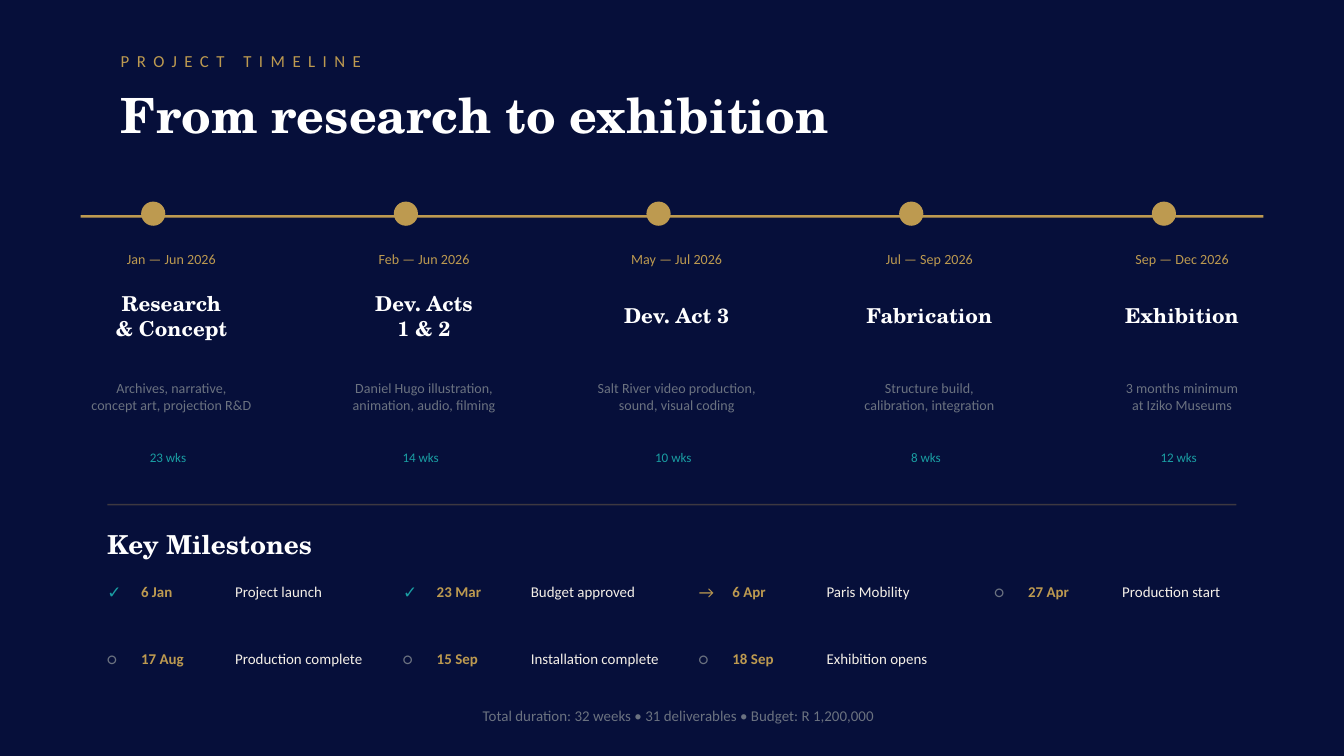
import pptx
import pptx.dml.color
import pptx.enum.shapes
import pptx.enum.text
import pptx.oxml.ns
import pptx.util
import lxml.etree

Inches = pptx.util.Inches
RGBColor = pptx.dml.color.RGBColor
Shape = pptx.enum.shapes.MSO_SHAPE
Align = pptx.enum.text.PP_ALIGN

NAVY = RGBColor(0x06, 0x0F, 0x3A)
GOLD = RGBColor(0xBD, 0x9A, 0x50)
TEAL = RGBColor(0x1A, 0x9E, 0xA3)
GRAY = RGBColor(0x6B, 0x72, 0x80)
CREAM = RGBColor(0xF5, 0xF0, 0xE8)
WHITE = RGBColor(0xFF, 0xFF, 0xFF)

SANS = "Calibri"
SERIF = "TeX Gyre Schola"

PHASES = [
    ("Jan — Jun 2026", "Research\n& Concept",
     "Archives, narrative,\nconcept art, projection R&D", "23 wks"),
    ("Feb — Jun 2026", "Dev. Acts\n1 & 2",
     "Daniel Hugo illustration,\nanimation, audio, filming", "14 wks"),
    ("May — Jul 2026", "Dev. Act 3",
     "Salt River video production,\nsound, visual coding", "10 wks"),
    ("Jul — Sep 2026", "Fabrication",
     "Structure build,\ncalibration, integration", "8 wks"),
    ("Sep — Dec 2026", "Exhibition",
     "3 months minimum\nat Iziko Museums", "12 wks"),
]
PHASE_LEFT = 0.4
PHASE_STEP = 1.88
PHASE_WIDTH = 1.75

MILESTONES = [
    ("✓", "6 Jan", "Project launch"),
    ("✓", "23 Mar", "Budget approved"),
    ("→", "6 Apr", "Paris Mobility"),
    ("○", "27 Apr", "Production start"),
    ("○", "17 Aug", "Production complete"),
    ("○", "15 Sep", "Installation complete"),
    ("○", "18 Sep", "Exhibition opens"),
]
MARK_COLORS = {"✓": TEAL, "→": GOLD, "○": GRAY}
MILESTONE_COLUMNS = 4


def add_text(slide, text, left, top, width, height, size, color, font=SANS,
             bold=False, align=Align.LEFT, inset=False):
    box = slide.shapes.add_textbox(
        Inches(left), Inches(top), Inches(width), Inches(height))
    frame = box.text_frame
    frame.word_wrap = True
    frame.vertical_anchor = pptx.enum.text.MSO_ANCHOR.MIDDLE
    if not inset:
        frame.margin_left = frame.margin_right = 0
        frame.margin_top = frame.margin_bottom = 0
    frame.text = text
    for paragraph in frame.paragraphs:
        paragraph.alignment = align
        paragraph.font.name = font
        paragraph.font.size = pptx.util.Pt(size)
        paragraph.font.bold = bold
        paragraph.font.color.rgb = color
    return box


def add_gold_shape(slide, kind, left, top, width, height):
    shape = slide.shapes.add_shape(
        kind, Inches(left), Inches(top), Inches(width), Inches(height))
    shape.shadow.inherit = False
    shape.fill.solid()
    shape.fill.fore_color.rgb = GOLD
    shape.line.fill.background()
    return shape


def set_opacity(shape, percent):
    color = shape._element.spPr.find(".//" + pptx.oxml.ns.qn("a:srgbClr"))
    alpha = lxml.etree.SubElement(color, pptx.oxml.ns.qn("a:alpha"))
    alpha.set("val", str(percent * 1000))


def set_letter_spacing(box, points):
    for run in box.text_frame.paragraphs[0].runs:
        run._r.get_or_add_rPr().set("spc", str(points * 100))


def add_header(slide):
    label = add_text(slide, "PROJECT TIMELINE", 0.8, 0.3, 5, 0.3, 9, GOLD,
                     inset=True)
    set_letter_spacing(label, 4)
    add_text(slide, "From research to exhibition", 0.8, 0.6, 9, 0.5, 26, WHITE,
             font=SERIF, bold=True, inset=True)


def add_phase(slide, left, dates, title, details, duration):
    add_gold_shape(slide, Shape.OVAL, left + 0.65, 1.5, 0.18, 0.18)
    add_text(slide, dates, left, 1.8, PHASE_WIDTH, 0.25, 7.5, GOLD,
             align=Align.CENTER)
    add_text(slide, title, left, 2.1, PHASE_WIDTH, 0.5, 11, WHITE,
             font=SERIF, bold=True, align=Align.CENTER)
    add_text(slide, details, left, 2.65, PHASE_WIDTH, 0.6, 7.5, GRAY,
             align=Align.CENTER)
    add_text(slide, duration, left + 0.35, 3.3, 1, 0.2, 7, TEAL,
             align=Align.CENTER)


def add_milestone(slide, left, top, mark, date, event):
    add_text(slide, mark, left, top, 0.2, 0.2, 9, MARK_COLORS[mark])
    add_text(slide, date, left + 0.25, top, 0.8, 0.2, 8, GOLD, bold=True)
    add_text(slide, event, left + 0.95, top, 1.2, 0.2, 8, CREAM)


def main():
    presentation = pptx.Presentation()
    presentation.slide_width = Inches(10)
    presentation.slide_height = Inches(10 * 9 / 16)
    slide = presentation.slides.add_slide(presentation.slide_layouts[6])
    slide.background.fill.solid()
    slide.background.fill.fore_color.rgb = NAVY

    add_header(slide)
    add_gold_shape(slide, Shape.RECTANGLE, 0.6, 1.6, 8.8, 0.02)
    for index, phase in enumerate(PHASES):
        add_phase(slide, PHASE_LEFT + index * PHASE_STEP, *phase)

    divider = add_gold_shape(slide, Shape.RECTANGLE, 0.8, 3.75, 8.4, 0.01)
    set_opacity(divider, 30)
    add_text(slide, "Key Milestones", 0.8, 3.9, 3, 0.3, 14, WHITE,
             font=SERIF, bold=True)
    for index, milestone in enumerate(MILESTONES):
        row, column = divmod(index, MILESTONE_COLUMNS)
        add_milestone(slide, 0.8 + column * 2.2, 4.3 + row * 0.5, *milestone)

    add_text(slide,
             "Total duration: 32 weeks • 31 deliverables • Budget: R 1,200,000",
             0.8, 5.2, 8.5, 0.25, 8, GRAY, align=Align.CENTER, inset=True)
    presentation.save("out.pptx")


if __name__ == "__main__":
    main()
